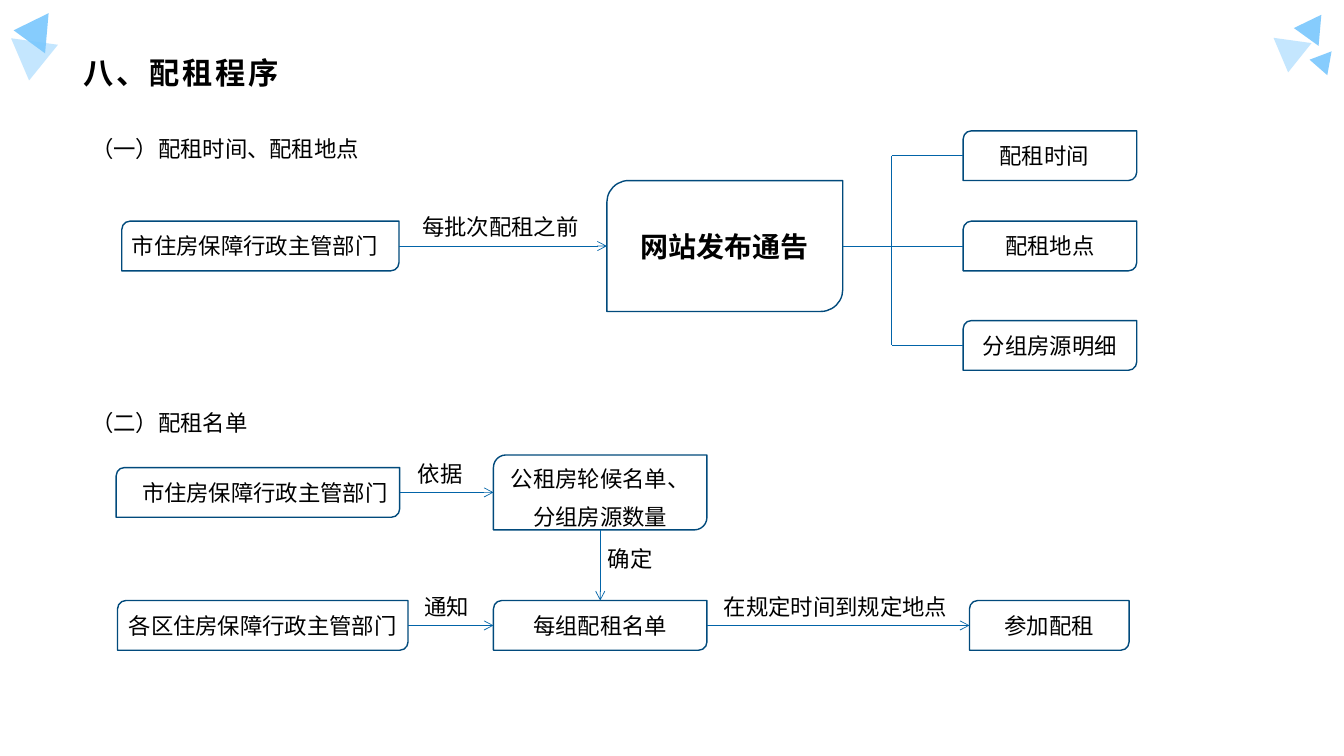
from lxml import etree
from pptx import Presentation
from pptx.dml.color import RGBColor
from pptx.enum import shapes, text
from pptx.oxml import ns
from pptx.util import Pt

BLACK = RGBColor(0x00, 0x00, 0x00)
BORDER = RGBColor(0x01, 0x4A, 0x7C)
ARROW = RGBColor(0x02, 0x64, 0xA8)
SKY = RGBColor(0x79, 0xC7, 0xFD)
CJK = "Noto Sans CJK SC"
TOP, LEFT, BOTTOM, RIGHT = range(4)
BOX_H = 35.5


def add_child(parent, tag, **attrs):
    return etree.SubElement(parent, ns.qn(tag), attrs)


def add_run(p, words, size=16, bold=False, latin=CJK):
    r = p.add_run()
    r.text = words
    r.font.size, r.font.bold, r.font.name = Pt(size), bold, latin
    r.font.color.rgb = BLACK
    add_child(r.font._element, "a:ea", typeface=CJK)
    return r


def add_label(s, words, x, y, w):
    tf = s.shapes.add_textbox(Pt(x), Pt(y), Pt(w), Pt(26.5)).text_frame
    tf.word_wrap = True
    add_run(tf.paragraphs[0], words)


def add_box(s, lines, x, y, w, h=BOX_H, shift=0, size=16, bold=False):
    sp = s.shapes.add_shape(shapes.MSO_SHAPE.ROUND_2_DIAG_RECTANGLE,
                            Pt(x), Pt(y), Pt(w), Pt(h))
    sp.shadow.inherit = False
    sp.fill.background()
    sp.line.color.rgb, sp.line.width = BORDER, Pt(1)
    tf = sp.text_frame
    tf.word_wrap = True
    tf.vertical_anchor = text.MSO_ANCHOR.MIDDLE
    tf.margin_top = tf.margin_bottom = 0
    tf.margin_left, tf.margin_right = Pt(max(0, 2 * shift)), Pt(max(0, -2 * shift))
    for i, line in enumerate(lines):
        p = tf.add_paragraph() if i else tf.paragraphs[0]
        p.alignment = text.PP_ALIGN.CENTER
        if len(lines) > 1:
            p.line_spacing = Pt(26.5)
        add_run(p, line, size, bold)
    return sp


def add_line(s, x1=0, y1=0, x2=0, y2=0):
    line = s.shapes.add_connector(shapes.MSO_CONNECTOR.STRAIGHT,
                                  Pt(x1), Pt(y1), Pt(x2), Pt(y2))
    line.line.color.rgb, line.line.width = ARROW, Pt(0.5)
    add_child(line._element.spPr, "a:effectLst")
    return line


def join_start(line, sp, side):
    line.begin_connect(sp, side)
    line._element.nvCxnSpPr.cNvCxnSpPr.stCxn.idx = 3 - side


def join_end(line, sp, side):
    line.end_connect(sp, side)
    line._element.nvCxnSpPr.cNvCxnSpPr.endCxn.idx = 3 - side


def link(s, start, end, start_side=RIGHT, end_side=LEFT, arrow=True):
    line = add_line(s)
    join_start(line, start, start_side)
    join_end(line, end, end_side)
    if arrow:
        add_child(line.line._get_or_add_ln(), "a:tailEnd", type="arrow")


def add_triangle(s, x, y, w, h, angle, alpha):
    sp = s.shapes.add_shape(shapes.MSO_SHAPE.ISOSCELES_TRIANGLE,
                            Pt(x), Pt(y), Pt(w), Pt(h))
    sp.shadow.inherit = False
    sp.rotation = angle
    sp.line.fill.background()
    sp.fill.solid()
    sp.fill.fore_color.rgb = SKY
    color = sp._element.spPr.find(".//" + ns.qn("a:srgbClr"))
    add_child(color, "a:alpha", val=str(alpha * 1000))


def add_corners(s, left, right, top):
    add_triangle(s, left, top + 18.7, 33.8, 28.1, 187.9, 44)
    add_triangle(s, left + 1.4, top, 28.8, 23.8, 275, 90)
    add_triangle(s, right + 14.4, top + 0.7, 22.3, 18.7, 275, 90)
    add_triangle(s, right, top + 18, 27.4, 23, 187.9, 44)
    add_triangle(s, right + 25.9, top + 25.9, 17.3, 14.4, 280.2, 90)


def add_title(s, words, x, y, w, h):
    title = s.shapes.title
    title.left, title.top, title.width, title.height = Pt(x), Pt(y), Pt(w), Pt(h)
    tf = title.text_frame
    tf.vertical_anchor = text.MSO_ANCHOR.MIDDLE
    p = tf.paragraphs[0]
    p.alignment = text.PP_ALIGN.LEFT
    r = add_run(p, words, 21.6, True, "Arial")
    r.font._element.set("spc", "200")


def add_notice_flow(s, x, y):
    add_label(s, "（一）配租时间、配租地点", x, y, 220)
    department = add_box(s, ["市住房保障行政主管部门"], x + 29, y + 65, 198, shift=-4)
    notice = add_box(s, ["网站发布通告"], x + 375.5, y + 36, 168.5, 93.5,
                     size=20, bold=True)
    time, place, homes = [
        add_box(s, [words], x + 630, y + dy, 124, shift=shift)
        for words, dy, shift in (("配租时间", 0.5, -4), ("配租地点", 65, 0),
                                 ("分组房源明细", 136, 0))]
    link(s, department, notice)
    link(s, notice, place, arrow=False)
    trunk = x + 579
    ends = [y + 0.5 + BOX_H / 2, y + 136 + BOX_H / 2]
    add_line(s, trunk, ends[0], trunk, ends[1])
    for sp, end in zip((time, homes), ends):
        join_end(add_line(s, trunk, end), sp, LEFT)
    add_label(s, "每批次配租之前", x + 236.5, y + 56, 130)


def add_list_flow(s, x, y):
    add_label(s, "（二）配租名单", x, y, 140)
    department = add_box(s, ["市住房保障行政主管部门"], x + 25, y + 45, 202.5, shift=5)
    basis = add_box(s, ["公租房轮候名单、", "分组房源数量"], x + 294.5, y + 36, 152.5, 53.5)
    district, group_list, attend = [
        add_box(s, [words], x + dx, y + 140, w)
        for words, dx, w in (("各区住房保障行政主管部门", 26, 207.5),
                             ("每组配租名单", 294.5, 152.5), ("参加配租", 634.5, 114))]
    link(s, department, basis)
    link(s, basis, group_list, BOTTOM, TOP)
    link(s, district, group_list)
    link(s, group_list, attend)
    for words, dx, dy, w in (("依据", 233.5, 36, 47), ("确定", 369, 97, 60),
                             ("通知", 238, 131, 47), ("在规定时间到规定地点", 452, 131, 176)):
        add_label(s, words, x + dx, y + dy, w)


def main():
    prs = Presentation()
    prs.slide_width, prs.slide_height = Pt(960), Pt(540)
    s = prs.slides.add_slide(prs.slide_layouts[5])
    add_corners(s, 5.8, 908, 10.8)
    add_title(s, "八、配租程序", 52.5, 34.5, 854.5, 34.5)
    add_notice_flow(s, 58, 93)
    add_list_flow(s, 58, 289)
    prs.save("out.pptx")


if __name__ == "__main__":
    main()
